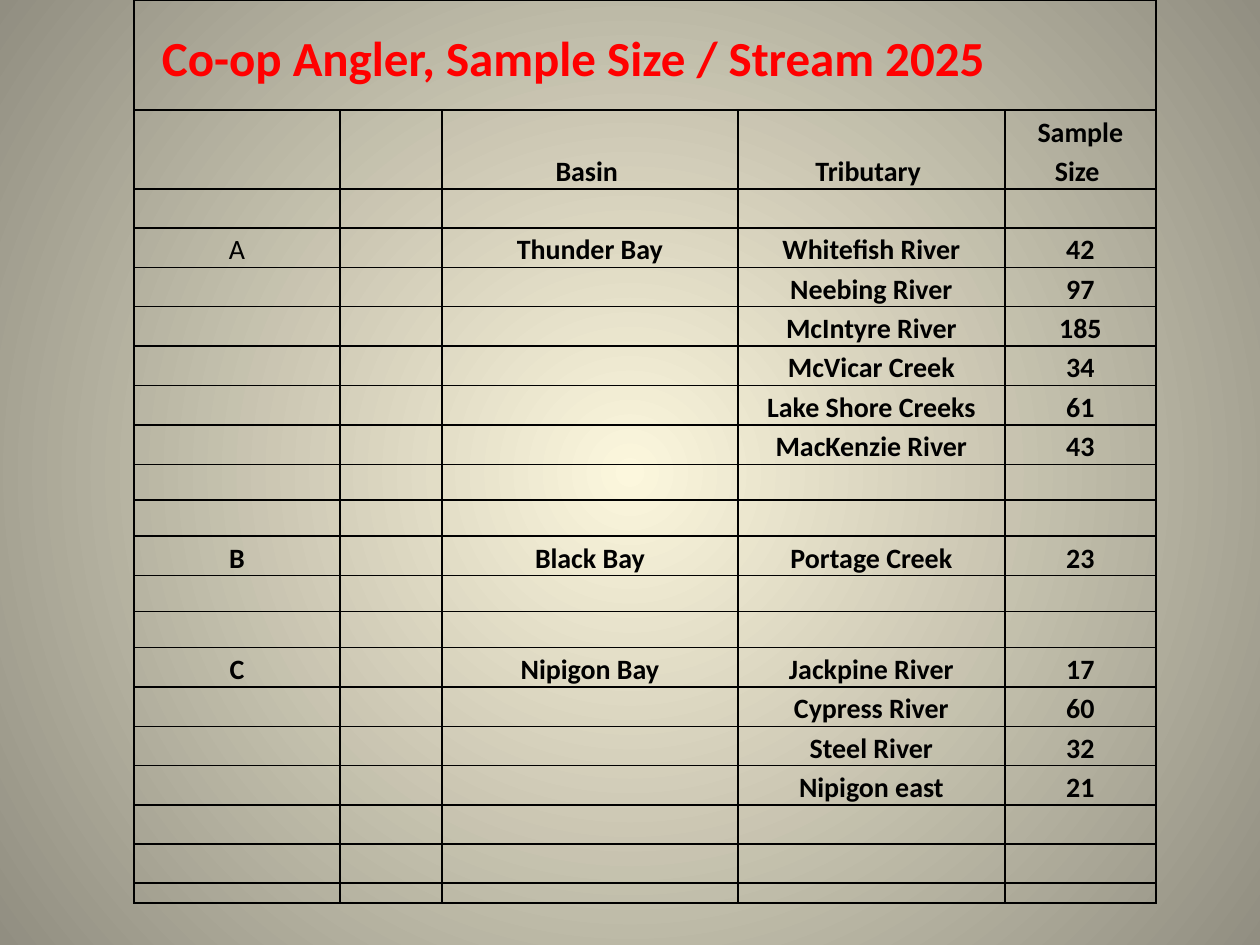
from dataclasses import dataclass

from lxml.etree import SubElement
from pptx import Presentation
from pptx.dml.color import RGBColor
from pptx.enum.text import MSO_ANCHOR, PP_ALIGN
from pptx.oxml.ns import qn
from pptx.util import Pt

PX = 914400 // 126

TITLE = "Co-op Angler, Sample Size / Stream 2025"
HEADER = ("", "", "Basin ", "Tributary ", "Sample Size ")
BLANK = ("",) * 5
# Each row: height in px, then its cells
ROWS = [
    (90, (TITLE, "", "", "", "")),
    (20, BLANK),
    (79, HEADER),
    (39, BLANK),
    (39, ("A", "", "Thunder Bay", "Whitefish River", "42")),
    (39, ("", "", "", "Neebing River", "97")),
    (39, ("", "", "", "McIntyre River", "185")),
    (39, ("", "", "", "McVicar Creek", "34")),
    (39, ("", "", "", "Lake Shore Creeks", "61")),
    (39, ("", "", "", "MacKenzie River", "43")),
    (36, BLANK),
    (36, BLANK),
    (39, ("B", "", "Black Bay", "Portage Creek", "23")),
    (36, BLANK),
    (36, BLANK),
    (39, ("C", "", "Nipigon Bay", "Jackpine River", "17")),
    (39, ("", "", "", "Cypress River", "60")),
    (39, ("", "", "", "Steel River", "32")),
    (39, ("", "", "", "Nipigon east", "21")),
    (39, BLANK),
    (39, BLANK),
    (20, BLANK),
]
COLUMN_WIDTHS = (206, 102, 296, 267, 151)
TABLE_LEFT = 134
TITLE_ROWS = 2  # the title row and the open strip below it


@dataclass(frozen=True)
class Theme:
    font: str = "Calibri"
    title_size: int = 28
    body_size: int = 16
    empty_size: int = 6
    title: str = "FF0000"
    ink: str = "000000"
    center: str = "FCF7DD"
    edge: str = "918E81"
    border: int = 1


THEME = Theme()


def paint_background(slide):
    """Fill the slide with a circular gradient spreading from its middle."""
    fill = slide.background.fill
    fill.gradient()
    for stop, color, position in zip(fill.gradient_stops, (THEME.center, THEME.edge), (0, 1)):
        stop.color.rgb = RGBColor.from_string(color)
        stop.position = position
    gradient = slide.element.find(".//" + qn("a:gradFill"))
    gradient.remove(gradient.find(qn("a:lin")))
    circle = SubElement(gradient, qn("a:path"), path="circle")
    SubElement(circle, qn("a:fillToRect"), l="50000", t="50000", r="50000", b="50000")


def set_borders(cell, sides):
    """Rule the given sides (letters of LRTB) and leave the others open."""
    properties = cell._tc.get_or_add_tcPr()
    for side in "LRTB":
        line = SubElement(properties, qn("a:ln" + side), w=str(Pt(THEME.border)))
        if side in sides:
            solid = SubElement(line, qn("a:solidFill"))
            SubElement(solid, qn("a:srgbClr"), val=THEME.ink)
        else:
            SubElement(line, qn("a:noFill"))


def border_sides(row, column):
    if row >= TITLE_ROWS:
        return "LRTB"
    outer = {"L": column == 0, "R": column == len(COLUMN_WIDTHS) - 1,
             "T": row == 0, "B": row == TITLE_ROWS - 1}
    return "".join(side for side, ruled in outer.items() if ruled)


def write_cell(cell, text, size, color, bold=True, align=PP_ALIGN.CENTER, left=8):
    cell.margin_left, cell.margin_right = left * PX, 8 * PX
    cell.margin_top = cell.margin_bottom = 0
    cell.vertical_anchor = MSO_ANCHOR.BOTTOM
    paragraph = cell.text_frame.paragraphs[0]
    if not text:
        SubElement(paragraph._p, qn("a:endParaRPr"), sz=str(THEME.empty_size * 100))
        return
    paragraph.alignment = align
    paragraph.line_spacing = 1.15
    run = paragraph.add_run()
    run.text = text
    run.font.name = THEME.font
    run.font.size = Pt(size)
    run.font.bold = bold
    run.font.color.rgb = RGBColor.from_string(color)


def add_sample_table(slide):
    heights = [height for height, _ in ROWS]
    table = slide.shapes.add_table(len(ROWS), len(COLUMN_WIDTHS), TABLE_LEFT * PX, 0,
                                   sum(COLUMN_WIDTHS) * PX, sum(heights) * PX).table
    table.first_row = table.horz_banding = False
    for column, width in zip(table.columns, COLUMN_WIDTHS):
        column.width = width * PX
    for row, (height, texts) in enumerate(ROWS):
        table.rows[row].height = height * PX
        for column, text in enumerate(texts):
            cell = table.cell(row, column)
            set_borders(cell, border_sides(row, column))
            cell.fill.background()
            if text == TITLE:
                write_cell(cell, text, THEME.title_size, THEME.title,
                           align=PP_ALIGN.LEFT, left=28)
            else:
                write_cell(cell, text, THEME.body_size, THEME.ink, bold=text != "A")
    table.cell(0, 0).merge(table.cell(0, 3))


def main():
    presentation = Presentation()
    presentation.slide_width, presentation.slide_height = 1260 * PX, 945 * PX
    slide = presentation.slides.add_slide(presentation.slide_layouts[6])
    paint_background(slide)
    add_sample_table(slide)
    presentation.save("out.pptx")


if __name__ == "__main__":
    main()
